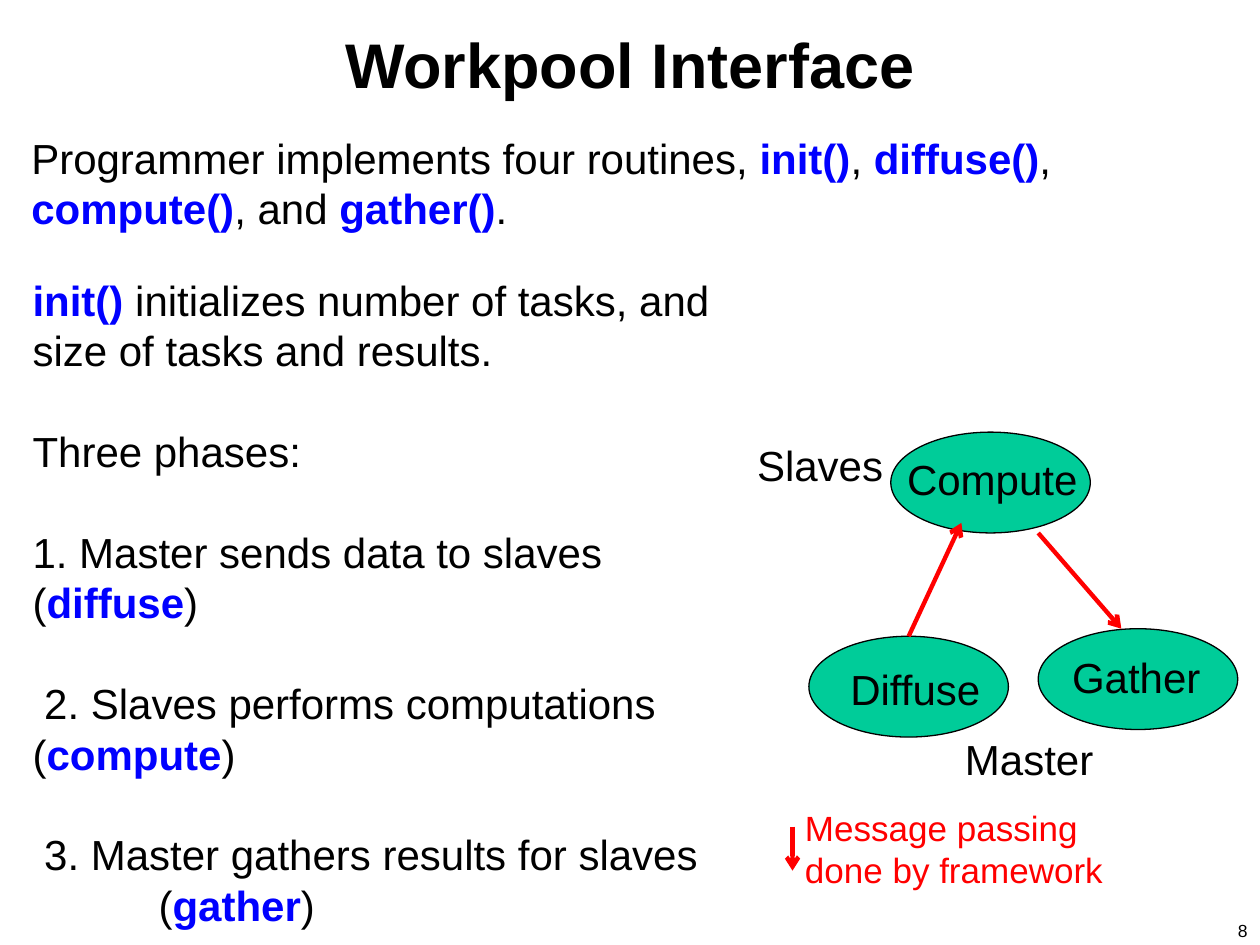
import pptx
import pptx.util
import pptx.dml.color
import pptx.enum.shapes
import pptx.enum.text
import pptx.oxml.ns
import lxml.etree

Pt = pptx.util.Pt
RGBColor = pptx.dml.color.RGBColor
ALIGN = pptx.enum.text.PP_ALIGN
ANCHOR = pptx.enum.text.MSO_ANCHOR
qn = pptx.oxml.ns.qn

BLACK = RGBColor(0x00, 0x00, 0x00)
WHITE = RGBColor(0xFF, 0xFF, 0xFF)
BLUE = RGBColor(0x00, 0x00, 0xFF)
RED = RGBColor(0xFF, 0x00, 0x00)
GREEN = RGBColor(0x00, 0xCC, 0x99)

PLAIN = {"name": "Arial", "size": Pt(24), "bold": False}
ROUTINE = {**PLAIN, "bold": True}
TITLE = {**PLAIN, "size": Pt(36), "bold": True}
NOTE = {**PLAIN, "size": Pt(20)}
NUMBER = {**PLAIN, "size": Pt(10)}

presentation = pptx.Presentation()
presentation.slide_width = Pt(720)
presentation.slide_height = Pt(540)
slide = presentation.slides.add_slide(presentation.slide_layouts[6])
slide.background.fill.solid()
slide.background.fill.fore_color.rgb = WHITE


def add_text_box(left, top, width, height, wrap=True):
    shape = slide.shapes.add_textbox(Pt(left), Pt(top), Pt(width), Pt(height))
    shape.text_frame.word_wrap = wrap
    return shape.text_frame


def write(paragraph, text, values=PLAIN, color=BLACK):
    run = paragraph.add_run()
    run.text = text
    for name, value in values.items():
        setattr(run.font, name, value)
    run.font.color.rgb = color


title_frame = add_text_box(0, -8.64, 720, 90)
title_frame.vertical_anchor = ANCHOR.MIDDLE
title_frame.paragraphs[0].alignment = ALIGN.CENTER
write(title_frame.paragraphs[0], "Workpool Interface", TITLE)

phases = [
    (0, 0, 0, ["", "init() ", "initializes number of tasks, and size of tasks and results."]),
    (28.8, 0, 0, ["Three phases:"]),
    (28.8, 0, 0, ["1. Master sends data to slaves\v(", "diffuse", ")"]),
    (28.8, 0, 6.67, ["2. Slaves performs computations\v(", "compute", ")"]),
    (28.8, 0, 6.67, ["3. Master gathers results for slaves"]),
    (0, 72, 0, ["(", "gather", ")"]),
]
body_frame = add_text_box(11.52, 153.36, 414, 386.64)
for index, (gap, margin, indent, pieces) in enumerate(phases):
    paragraph = body_frame.add_paragraph() if index else body_frame.paragraphs[0]
    paragraph.space_before = Pt(gap)
    properties = paragraph._p.get_or_add_pPr()
    properties.set("marL", str(Pt(margin)))
    properties.set("indent", str(Pt(indent)))
    for position, piece in enumerate(pieces):
        for line_number, line in enumerate(piece.split("\v")):
            if line_number:
                paragraph.add_line_break()
            if line:
                write(paragraph, line, *((ROUTINE, BLUE) if position % 2 else (PLAIN, BLACK)))

number_paragraph = add_text_box(570.24, 522, 149.76, 36).paragraphs[0]
number_paragraph.alignment = ALIGN.RIGHT
write(number_paragraph, "8", NUMBER)

stages = [
    ("Diffuse", 462.24, 363.6, 478.8, 375.84, 90),
    ("Compute", 509.04, 246.96, 511.2, 255.6, 113.76),
    ("Gather", 593.28, 359.28, 605.52, 368.64, 92.16),
]
ellipses = {}
for name, left, top, label_left, label_top, label_width in stages:
    ellipse = slide.shapes.add_shape(
        pptx.enum.shapes.MSO_SHAPE.OVAL, Pt(left), Pt(top), Pt(114), Pt(57.6)
    )
    ellipse.shadow.inherit = False
    ellipse.fill.solid()
    ellipse.fill.fore_color.rgb = GREEN
    ellipse.line.color.rgb = BLACK
    ellipse.line.width = Pt(0.75)
    ellipses[name] = ellipse
    write(add_text_box(label_left, label_top, label_width, 36).paragraphs[0], name)

arrows = [
    (593.28, 304.56, 640.8, 359.28, None),
    (519.24, 363.6, 549.36, 298.8, "Diffuse"),
    (452.88, 472.32, 452.88, 497.52, None),
]
for start_x, start_y, end_x, end_y, source in arrows:
    arrow = slide.shapes.add_connector(
        pptx.enum.shapes.MSO_CONNECTOR.STRAIGHT,
        Pt(start_x), Pt(start_y), Pt(end_x), Pt(end_y),
    )
    if source:
        arrow.begin_connect(ellipses[source], 0)
    arrow.line.color.rgb = RED
    arrow.line.width = Pt(2.5)
    lxml.etree.SubElement(arrow.line._get_or_add_ln(), qn("a:tailEnd"), type="arrow")
    lxml.etree.SubElement(arrow._element.spPr, qn("a:effectLst"))

for name, left, top, width in [("Slaves", 425.52, 247.68, 87.12), ("Master", 544.32, 415.44, 88.56)]:
    write(add_text_box(left, top, width, 36, False).paragraphs[0], name)

note_frame = add_text_box(452.88, 457.2, 192.24, 55.44)
write(note_frame.paragraphs[0], "Message passing done by framework", NOTE, RED)

introduction = [
    "Programmer implements four routines, ", "init()", ", ", "diffuse()", ", ",
    "compute()", ", and ", "gather()", ".",
]
introduction_frame = add_text_box(10.8, 72, 687.6, 65.52)
for position, piece in enumerate(introduction):
    write(introduction_frame.paragraphs[0], piece, *((ROUTINE, BLUE) if position % 2 else (PLAIN, BLACK)))

presentation.save("out.pptx")
